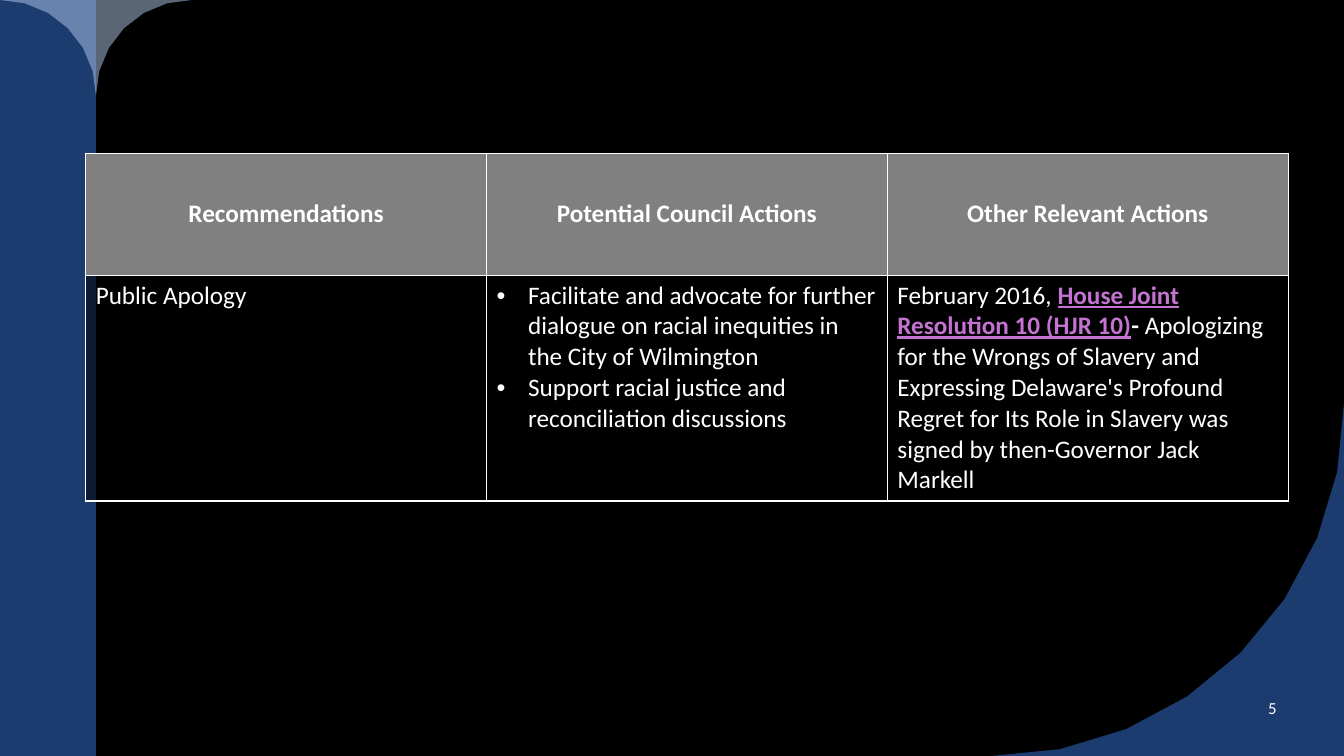
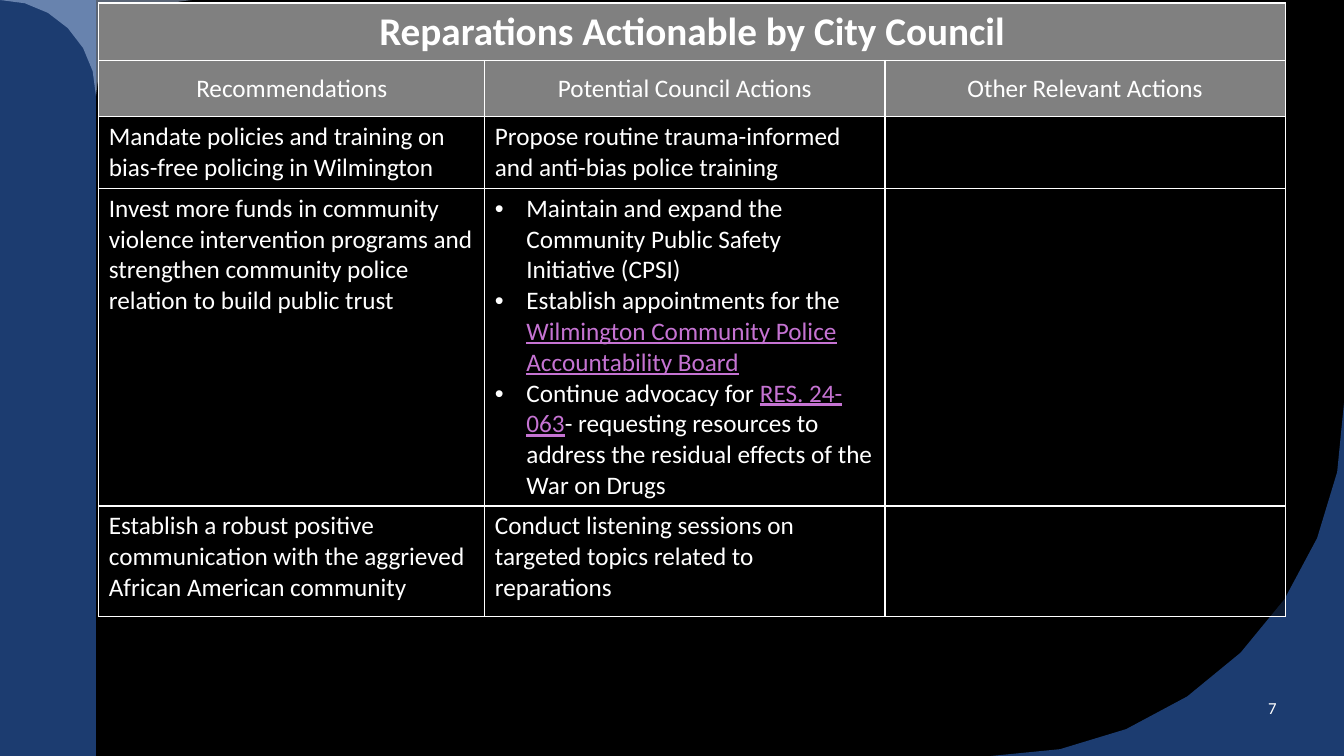
from dataclasses import dataclass
from math import cos, radians, sin

from lxml.etree import SubElement
from pptx import Presentation
from pptx.dml.color import RGBColor
from pptx.enum.shapes import MSO_SHAPE as Shape
from pptx.enum.text import MSO_ANCHOR as Anchor, PP_ALIGN as Align
from pptx.oxml import parse_xml
from pptx.oxml.ns import nsdecls, qn
from pptx.util import Inches, Pt

COLORS = {
    "back": "000000",
    "band": "1C3C70",
    "corner": "B5CAED",
    "header": "808080",
    "text": "FFFFFF",
    "link": "C573D2",
}
FONT = "Calibri"
W, H = 13.333, 7.5
COL = W / 14
BULLET_INDENT = Pt(22.5)
HEADINGS = ("Recommendations", "Potential Council Actions", "Other Relevant Actions")


@dataclass(frozen=True)
class Run:
    text: str
    bold: bool = False
    link: bool = False


@dataclass(frozen=True)
class Para:
    runs: tuple[Run, ...]
    bullet: bool = False


@dataclass(frozen=True)
class Cell:
    paras: tuple[Para, ...] = ()
    header: bool = False
    size: int = 18
    span: int = 1


@dataclass(frozen=True)
class TableSlide:
    number: int
    left: float
    top: float
    cols: tuple[float, ...]
    rows: tuple[float, ...]
    cells: tuple[tuple[Cell, ...], ...]


def plain(text: str) -> Cell:
    return Cell((Para((Run(text),)),))


def bullets(*items: tuple[Run, ...]) -> Cell:
    return Cell(tuple(Para(runs, bullet=True) for runs in items))


def heading(text: str, bold: bool = False, size: int = 18, span: int = 1) -> Cell:
    return Cell((Para((Run(text, bold),)),), True, size, span)


def headings(bold: bool) -> tuple[Cell, ...]:
    return tuple(heading(text, bold) for text in HEADINGS)


SLIDES = (
    TableSlide(5, 0.85, 1.52, (11.93 / 3,) * 3, (1.21, 2.24), (
        headings(bold=True),
        (
            plain("Public Apology"),
            bullets(
                (Run("Facilitate and advocate for further dialogue on racial "
                     "inequities in the City of Wilmington"),),
                (Run("Support racial justice and reconciliation discussions"),),
            ),
            Cell((Para((
                Run("February 2016, "),
                Run("House Joint Resolution 10 (HJR 10)", bold=True, link=True),
                Run("- ", bold=True),
                Run("Apologizing for the Wrongs of Slavery and Expressing "
                    "Delaware's Profound Regret for Its Role in Slavery was "
                    "signed by then-Governor Jack Markell"),
            )),)),
        ),
    )),
    TableSlide(7, 0.98, 0.03, (3.83, 3.97, 3.97), (0.57, 0.56, 0.71, 3.15, 1.1), (
        (heading("Reparations Actionable by City Council", True, 28, 3),),
        headings(bold=False),
        (
            plain("Mandate policies and training on bias-free policing in Wilmington"),
            plain("Propose routine trauma-informed and anti-bias police training"),
            Cell(),
        ),
        (
            plain("Invest more funds in community violence intervention programs "
                  "and strengthen community police relation to build public trust"),
            bullets(
                (Run("Maintain and expand the Community Public Safety "
                     "Initiative (CPSI)"),),
                (Run("Establish appointments for the "),
                 Run("Wilmington Community Police Accountability Board", link=True)),
                (Run("Continue advocacy for "),
                 Run("RES. 24-063", link=True),
                 Run("- requesting resources to address the residual effects "
                     "of the War on Drugs")),
            ),
            Cell(),
        ),
        (
            plain("Establish a robust positive communication with the aggrieved "
                  "African American community"),
            plain("Conduct listening sessions on targeted topics related to "
                  "reparations"),
            Cell(),
        ),
    )),
)


def rgb(name: str) -> RGBColor:
    return RGBColor.from_string(COLORS[name])


def set_alpha(props, percent: int) -> None:
    color = props.find(qn("a:solidFill")).find(qn("a:srgbClr"))
    SubElement(color, qn("a:alpha"), val=str(percent * 1000))


def paint(s, color: str) -> None:
    s.shadow.inherit = False
    s.fill.solid()
    s.fill.fore_color.rgb = rgb(color)
    s.line.fill.background()


def arc(cx: float, cy: float, radius: float, start: int, end: int,
        steps: int) -> list[tuple[float, float]]:
    angles = [radians(start + (end - start) * i / steps) for i in range(steps + 1)]
    return [(cx + radius * cos(a), cy + radius * sin(a)) for a in angles]


def add_outline(slide, points: list[tuple[float, float]], color: str):
    emu = [(Inches(x), Inches(y)) for x, y in points]
    builder = slide.shapes.build_freeform(*emu[0], scale=1.0)
    builder.add_line_segments(emu[1:], close=True)
    s = builder.convert_to_shape()
    paint(s, color)
    return s


def format_run(r, size: int, bold: bool = False, link: bool = False) -> None:
    r.font.name = FONT
    r.font.size = Pt(size)
    r.font.bold = bold
    r.font.underline = link
    r.font.color.rgb = rgb("link" if link else "text")


def add_backdrop(slide, number: int) -> None:
    slide.background.fill.solid()
    slide.background.fill.fore_color.rgb = rgb("back")
    band = slide.shapes.add_shape(Shape.RECTANGLE, 0, 0, Inches(COL), Inches(H))
    paint(band, "band")
    corner = add_outline(
        slide,
        arc(2 * COL, COL, COL, 270, 180, 6) + arc(0, COL, COL, 0, -90, 6)[1:],
        "corner",
    )
    set_alpha(corner._element.spPr, 50)
    radius = 3.5
    add_outline(slide, arc(W - radius, H - radius, radius, 0, 90, 8) + [(W, H)], "band")

    width = 1.42
    box = slide.shapes.add_textbox(
        Inches(W - width), Inches(H - COL), Inches(width), Inches(COL))
    tf = box.text_frame
    tf.word_wrap = True
    tf.vertical_anchor = Anchor.MIDDLE
    tf.text = str(number)
    p = tf.paragraphs[0]
    p.alignment = Align.CENTER
    format_run(p.runs[0], 12)


def add_bullet(p) -> None:
    props = p._p.get_or_add_pPr()
    props.set("marL", str(BULLET_INDENT))
    props.set("indent", str(-BULLET_INDENT))
    SubElement(props, qn("a:buFont"), typeface="Arial")
    SubElement(props, qn("a:buChar"), char="•")


def add_borders(props) -> None:
    for i, side in enumerate(("lnL", "lnR", "lnT", "lnB")):
        props.insert(i, parse_xml(
            f'<a:{side} {nsdecls("a")} w="{Pt(1)}"><a:solidFill>'
            f'<a:srgbClr val="{COLORS["text"]}"/></a:solidFill></a:{side}>'))


def style_cell(target, cell: Cell) -> None:
    target.fill.solid()
    target.fill.fore_color.rgb = rgb("header" if cell.header else "back")
    props = target._tc.get_or_add_tcPr()
    if not cell.header:
        set_alpha(props, 54)
    add_borders(props)
    target.vertical_anchor = Anchor.MIDDLE if cell.header else Anchor.TOP


def fill_cell(target, cell: Cell) -> None:
    tf = target.text_frame
    for i, para in enumerate(cell.paras):
        p = tf.add_paragraph() if i else tf.paragraphs[0]
        p.alignment = Align.CENTER if cell.header else Align.LEFT
        if para.bullet:
            add_bullet(p)
        for run in para.runs:
            r = p.add_run()
            r.text = run.text
            format_run(r, cell.size, run.bold, run.link)


def add_grid(slide, data: TableSlide) -> None:
    frame = slide.shapes.add_table(
        len(data.rows), len(data.cols), Inches(data.left), Inches(data.top),
        Inches(sum(data.cols)), Inches(sum(data.rows)))
    table = frame.table
    table.first_row = False
    table.horz_banding = False
    for column, width in zip(table.columns, data.cols):
        column.width = Inches(width)
    for row, height in zip(table.rows, data.rows):
        row.height = Inches(height)
    for y, cells in enumerate(data.cells):
        x = 0
        for cell in cells:
            for covered in range(x, x + cell.span):
                style_cell(table.cell(y, covered), cell)
            if cell.span > 1:
                table.cell(y, x).merge(table.cell(y, x + cell.span - 1))
            fill_cell(table.cell(y, x), cell)
            x += cell.span


def main() -> None:
    prs = Presentation()
    prs.slide_width, prs.slide_height = Inches(W), Inches(H)
    for data in SLIDES:
        slide = prs.slides.add_slide(prs.slide_layouts[6])
        add_backdrop(slide, data.number)
        add_grid(slide, data)
    prs.save("out.pptx")


if __name__ == "__main__":
    main()
